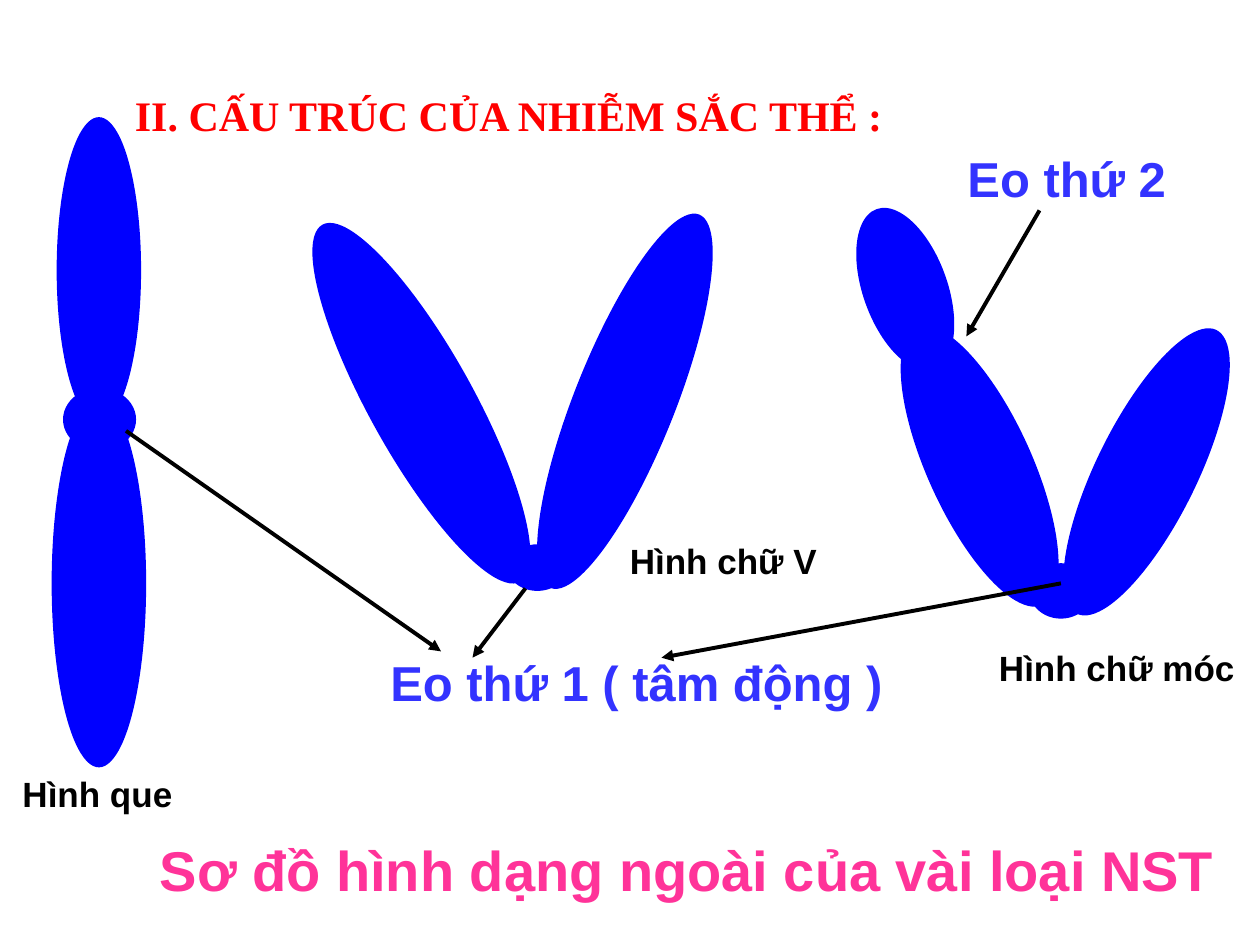
from lxml import etree
from pptx import Presentation
from pptx import util as u
from pptx.dml.color import RGBColor
from pptx.enum import shapes, text
from pptx.oxml import ns

COLUMNS, ROWS = 100, 75
COLORS = {"chromosome": "0000FF", "constriction": "3333FF", "caption": "FF3399",
          "heading": "FF0000", "ink": "000000"}


class ChromosomeSlide:
    def __init__(self, presentation):
        self.slide = presentation.slides.add_slide(presentation.slide_layouts[5])
        self.column = presentation.slide_width / COLUMNS
        self.row = presentation.slide_height / ROWS

    def place(self, left, top, width, height):
        return (round(left * self.column), round(top * self.row),
                round(width * self.column), round(height * self.row))

    def color(self, name):
        return RGBColor.from_string(COLORS[name])

    def set_wording(self, shape, wording, size, color, font="Arial", wrap=False):
        frame = shape.text_frame
        frame.text = wording
        frame.word_wrap = wrap
        frame.auto_size = text.MSO_AUTO_SIZE.NONE
        frame.vertical_anchor = text.MSO_ANCHOR.TOP
        paragraph = frame.paragraphs[0]
        paragraph.alignment = text.PP_ALIGN.LEFT
        for run in paragraph.runs:
            run.font.name = font
            run.font.size = u.Pt(size)
            run.font.bold = True
            run.font.color.rgb = self.color(color)

    def title(self, wording, *box):
        shape = self.slide.shapes.title
        shape.left, shape.top, shape.width, shape.height = self.place(*box)
        self.set_wording(shape, wording, 24, "heading", "Times New Roman")

    def label(self, wording, box, size=20, color="ink", wrap=False):
        shape = self.slide.shapes.add_textbox(*self.place(*box))
        self.set_wording(shape, wording, size, color, wrap=wrap)

    def oval(self, left, top, width, height, rotation=0):
        shape = self.slide.shapes.add_shape(
            shapes.MSO_SHAPE.OVAL, *self.place(left, top, width, height))
        shape.rotation = rotation
        shape.shadow.inherit = False
        shape.fill.solid()
        shape.fill.fore_color.rgb = self.color("chromosome")
        shape.line.fill.background()

    def arrow(self, *ends):
        connector = self.slide.shapes.add_connector(
            shapes.MSO_CONNECTOR.STRAIGHT, *self.place(*ends))
        connector.line.color.rgb = self.color("ink")
        connector.line.width = u.Pt(2.25)
        properties = connector._element.spPr
        line = properties.find(ns.qn("a:ln"))
        etree.SubElement(line, ns.qn("a:tailEnd"), type="triangle")
        etree.SubElement(properties, ns.qn("a:effectLst"))


def main():
    presentation = Presentation()
    presentation.slide_width = u.Inches(10)
    presentation.slide_height = u.Inches(7.5)
    slide = ChromosomeSlide(presentation)
    slide.title("II. CẤU TRÚC CỦA NHIỄM SẮC THỂ :", 9.7, 6.6, 62, 5.1)

    rod = [(4.5, 9.3, 6.7, 24.3), (5, 30.8, 5.8, 5), (4.1, 31.7, 7.5, 29.2)]
    v_form = [(29.3, 15.8, 8.3, 32.4, 331), (45.6, 15.9, 8, 31.9, 21.7),
              (40.3, 43.2, 4.7, 3.7)]
    hook = [(68.5, 16.2, 6.7, 13.5, 340.3), (73.6, 24.9, 8.3, 24.2, 335.6),
            (87, 24.9, 8, 25.1, 26.2), (81.7, 44.7, 5, 4.4)]
    for part in rod + v_form + hook:
        slide.oval(*part)

    for ends in [(82.5, 16.7, 76.7, 26.7), (41.7, 46.7, 37.5, 52.2),
                 (84.2, 46.3, 52.5, 52.2), (10, 34.2, 35, 51.7)]:
        slide.arrow(*ends)

    slide.label("Eo thứ 1 ( tâm động )", (30, 51.3, 49.2, 5.7), 28, "constriction", True)
    slide.label("Eo thứ 2", (75.8, 11.3, 22.5, 5.7), 28, "constriction", True)
    slide.label("Sơ đồ hình dạng ngoài của vài loại NST", (11.7, 65.8, 88.3, 6.3),
                32, "caption", True)
    slide.label("Hình que", (0.8, 60.8, 13.9, 4.3))
    slide.label("Hình chữ V", (49, 42.3, 16.8, 4.3))
    slide.label("Hình chữ móc", (78.3, 50.8, 20.9, 4.4))

    presentation.save("out.pptx")


if __name__ == "__main__":
    main()
